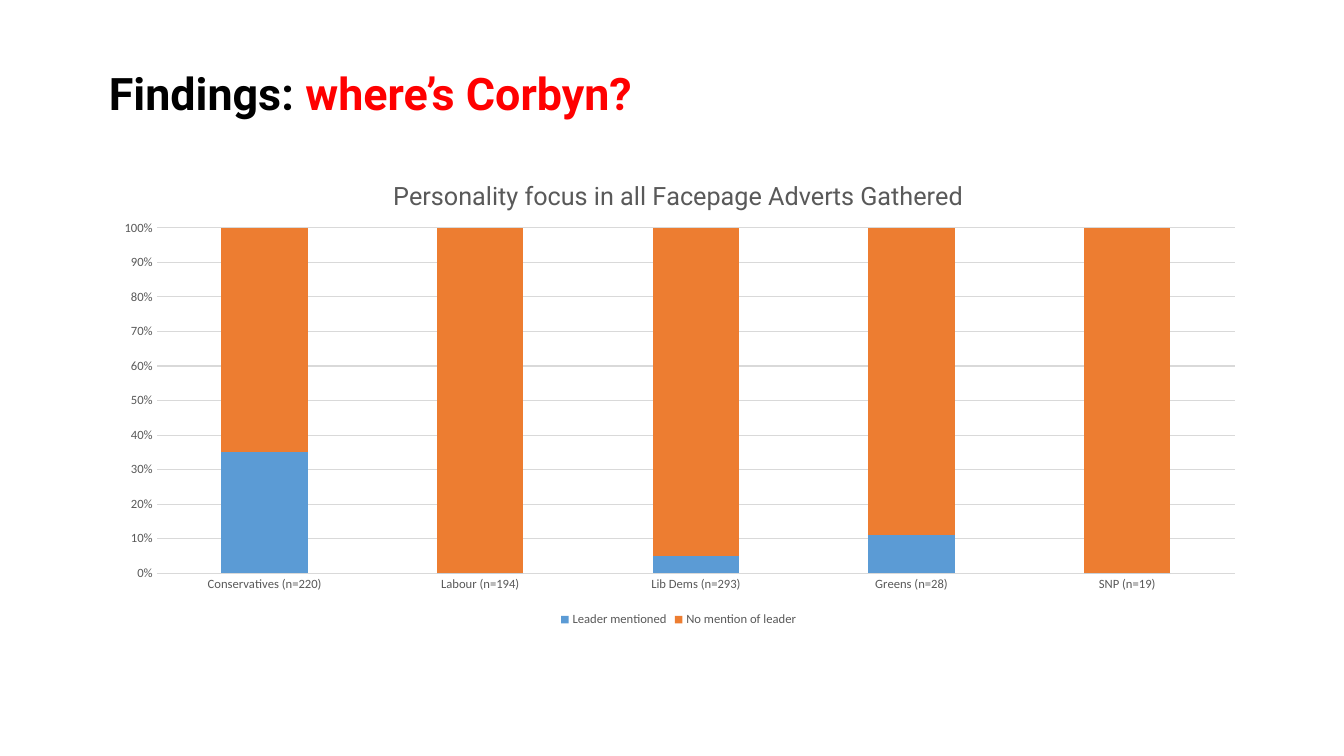
from dataclasses import dataclass
from typing import Any

from lxml import etree
from pptx import Presentation
from pptx.chart.data import CategoryChartData
from pptx.dml.color import RGBColor
from pptx.enum.chart import XL_CHART_TYPE, XL_LEGEND_POSITION, XL_TICK_MARK
from pptx.enum.text import MSO_ANCHOR, MSO_AUTO_SIZE, PP_ALIGN
from pptx.oxml import parse_xml
from pptx.oxml.ns import nsdecls, qn
from pptx.util import Inches, Pt

STACKED = XL_CHART_TYPE.COLUMN_STACKED_100
LEGEND_BOTTOM = XL_LEGEND_POSITION.BOTTOM
NO_TICK = XL_TICK_MARK.NONE
TOP, LEFT, NO_FIT = MSO_ANCHOR.TOP, PP_ALIGN.LEFT, MSO_AUTO_SIZE.NONE

SLIDE_WIDTH, SLIDE_HEIGHT = 13.33, 7.5
MARGIN, CONTENT_WIDTH = 0.98, 11.5
TITLE_TOP, TITLE_HEIGHT = 0.59, 1.45
CHART_TOP, CHART_HEIGHT = 1.5, 4.76
GREY, GRID_GREY = "595959", "D9D9D9"
HEADING_FONT, CHART_FONT = "Roboto", "Calibri"


@dataclass
class AnswerSeries:
    name: str
    percentages: tuple[int, ...]
    color: str


PARTIES = ("Conservatives (n=220)", "Labour (n=194)", "Lib Dems (n=293)",
           "Greens (n=28)", "SNP (n=19)")
MENTIONED = (35, 0, 5, 11, 0)
ANSWERS = (
    AnswerSeries("Leader mentioned", MENTIONED, "5B9BD5"),
    AnswerSeries("No mention of leader", tuple(100 - share for share in MENTIONED), "ED7D31"),
)
HEADING_PARTS = (("Findings: ", "000000"), ("where’s Corbyn?", "FF0000"))


def rgb(hex_color: str) -> RGBColor:
    return RGBColor.from_string(hex_color)


def apply_format(target: Any, values: dict[str, Any]) -> None:
    for attribute, value in values.items():
        setattr(target, attribute, value)


def style_font(font: Any, name: str, size: int, color: str, bold: bool = False) -> None:
    apply_format(font, {"name": name, "size": Pt(size), "bold": bold})
    font.color.rgb = rgb(color)


def style_line(line: Any) -> None:
    line.color.rgb = rgb(GRID_GREY)
    line.width = Pt(0.75)


def set_layout(element: Any, position: int, shares: dict[str, float], inner: bool = False) -> None:
    """Place a chart part by shares of the chart's size."""
    for old_layout in element.findall(qn("c:layout")):
        element.remove(old_layout)
    layout = parse_xml(f"<c:layout {nsdecls('c')}><c:manualLayout/></c:layout>")
    settings = {"layoutTarget": "inner"} if inner else {}
    settings |= {"xMode": "edge", "yMode": "edge"} | shares
    for tag, value in settings.items():
        etree.SubElement(layout[0], qn(f"c:{tag}")).set("val", str(value))
    element.insert(position, layout)


def add_heading(slide: Any) -> None:
    heading = slide.shapes.title
    apply_format(heading, {"left": Inches(MARGIN), "top": Inches(TITLE_TOP),
                           "width": Inches(CONTENT_WIDTH), "height": Inches(TITLE_HEIGHT)})
    apply_format(heading.text_frame, {
        "auto_size": NO_FIT, "word_wrap": True, "vertical_anchor": TOP,
        "margin_left": Inches(0.1), "margin_top": Inches(0.12),
        "margin_right": Inches(0.1), "margin_bottom": Inches(0.05)})
    paragraph = heading.text_frame.paragraphs[0]
    apply_format(paragraph, {"alignment": LEFT, "line_spacing": 0.9})
    for wording, color in HEADING_PARTS:
        run = paragraph.add_run()
        run.text = wording
        style_font(run.font, HEADING_FONT, 32, color, bold=True)


def style_axes(chart: Any) -> None:
    for axis in (chart.category_axis, chart.value_axis):
        apply_format(axis, {"major_tick_mark": NO_TICK, "minor_tick_mark": NO_TICK})
        style_font(axis.tick_labels.font, CHART_FONT, 9, GREY)
    style_line(chart.category_axis.format.line)
    shares = chart.value_axis
    apply_format(shares, {"minimum_scale": 0, "maximum_scale": 1, "major_unit": 0.1,
                          "has_major_gridlines": True})
    apply_format(shares.tick_labels, {"number_format": "0%", "number_format_is_linked": False})
    shares.format.line.fill.background()
    style_line(shares.major_gridlines.format.line)


def add_mentions_chart(slide: Any) -> None:
    data = CategoryChartData()
    data.categories = PARTIES
    for answer in ANSWERS:
        data.add_series(answer.name, answer.percentages)
    chart = slide.shapes.add_chart(
        STACKED, Inches(MARGIN), Inches(CHART_TOP),
        Inches(CONTENT_WIDTH), Inches(CHART_HEIGHT), data).chart
    style_font(chart.font, CHART_FONT, 10, "000000")
    style_axes(chart)

    plot = chart.plots[0]
    apply_format(plot, {"gap_width": 150, "overlap": 100, "vary_by_categories": False})
    for series, answer in zip(plot.series, ANSWERS):
        series.format.fill.solid()
        series.format.fill.fore_color.rgb = rgb(answer.color)

    apply_format(chart, {"has_title": True, "has_legend": True})
    caption = chart.chart_title.text_frame.paragraphs[0].add_run()
    caption.text = "Personality focus in all Facepage Adverts Gathered"
    style_font(caption.font, HEADING_FONT, 18, GREY)
    apply_format(chart.legend, {"position": LEGEND_BOTTOM, "include_in_layout": False})
    style_font(chart.legend.font, CHART_FONT, 9, GREY)

    title_element = chart.element.find(f".//{qn('c:title')}")
    set_layout(title_element, 1, {"x": 0.25, "y": 0.05})
    plot_area = chart.element.find(f".//{qn('c:plotArea')}")
    set_layout(plot_area, 0, {"x": 0.05, "y": 0.16, "w": 0.93, "h": 0.72}, inner=True)


def main() -> None:
    deck = Presentation()
    apply_format(deck, {"slide_width": Inches(SLIDE_WIDTH), "slide_height": Inches(SLIDE_HEIGHT)})
    slide = deck.slides.add_slide(deck.slide_layouts.get_by_name("Title Only"))
    add_heading(slide)
    add_mentions_chart(slide)
    deck.save("out.pptx")


if __name__ == "__main__":
    main()
